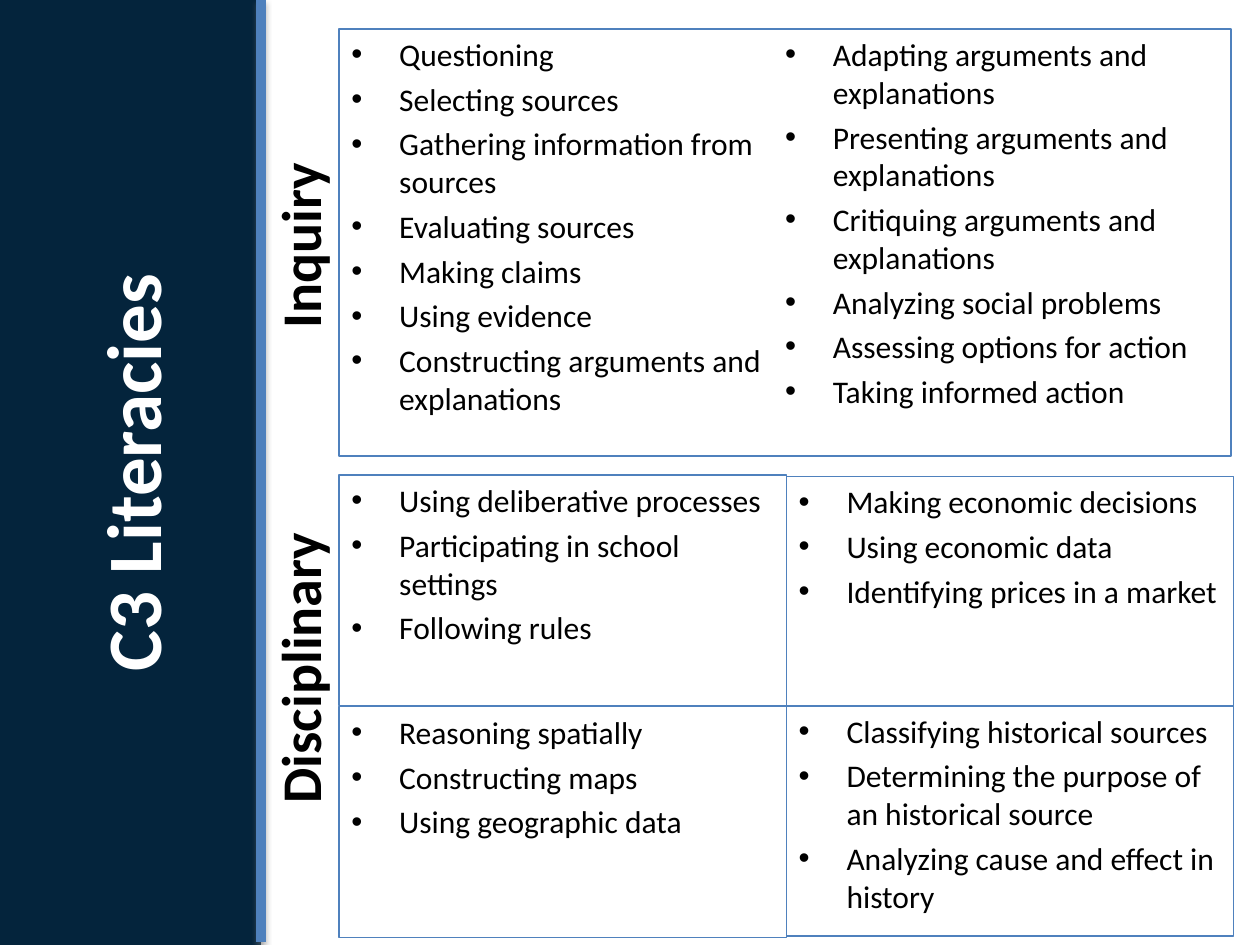
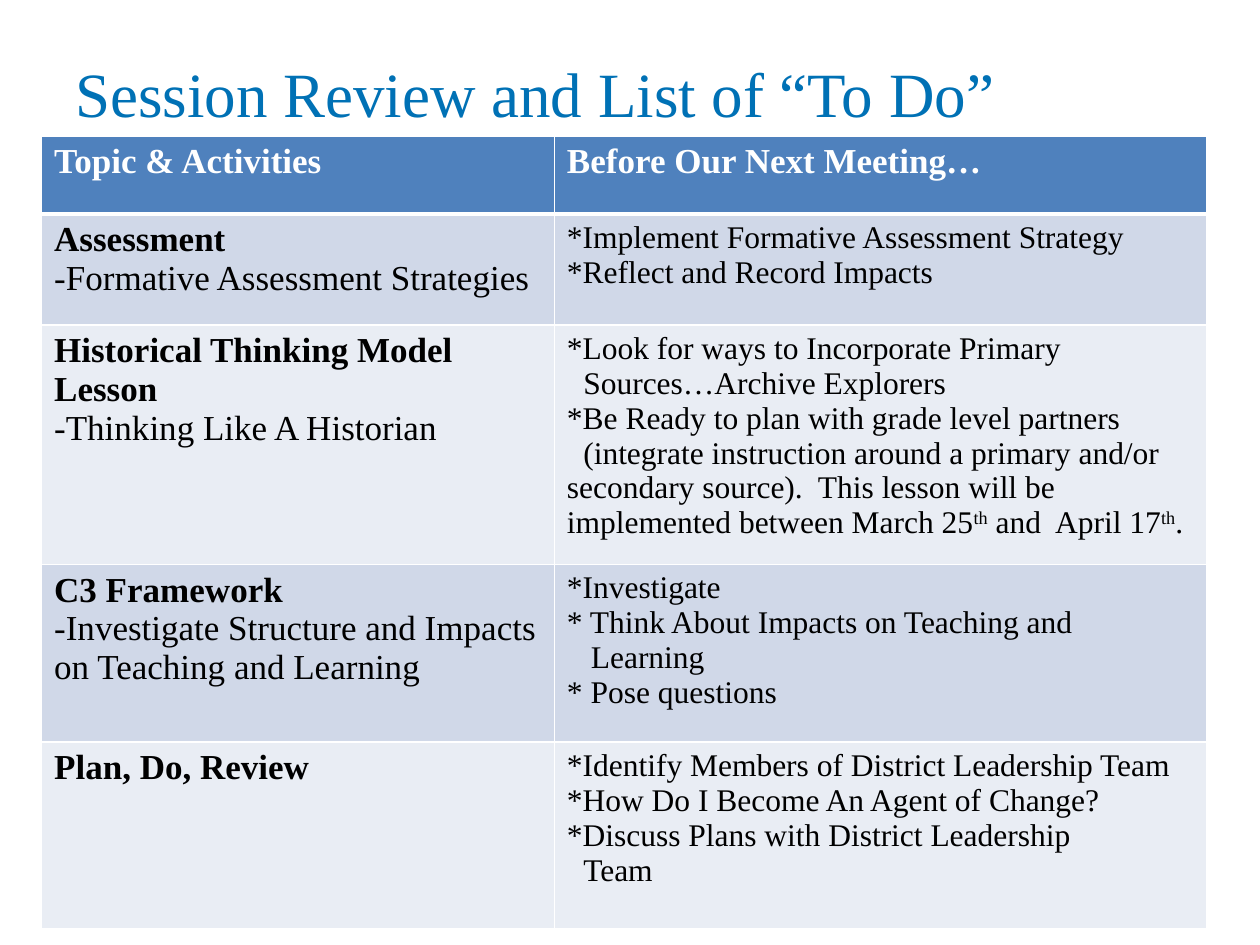
"""Build the C3 literacies overview and the session review table."""
from dataclasses import dataclass

import lxml.etree
import pptx
import pptx.dml.color
import pptx.enum.shapes
import pptx.enum.text
import pptx.oxml
import pptx.oxml.ns
import pptx.util

Inches = pptx.util.Inches
Pt = pptx.util.Pt
RGBColor = pptx.dml.color.RGBColor
qn = pptx.oxml.ns.qn

NAVY = RGBColor(0x04, 0x24, 0x3C)
BLUE = RGBColor(0x4F, 0x81, 0xBD)
TITLE_BLUE = RGBColor(0x00, 0x71, 0xB5)
PALE_BLUE = RGBColor(0xD0, 0xD8, 0xE8)
PALER_BLUE = RGBColor(0xE9, 0xED, 0xF4)
WHITE = RGBColor(0xFF, 0xFF, 0xFF)
BLACK = RGBColor(0x00, 0x00, 0x00)
GRAY = RGBColor(0x80, 0x80, 0x80)

SANS = "Calibri"
SERIF = "Times New Roman"
HANG = Inches(0.38)
BAND_WIDTH = 2.07


@dataclass(frozen=True)
class SkillBox:
    """A framed list of skills, placed in inches."""
    left: float
    top: float
    width: float
    height: float
    skills: tuple[str, ...]
    columns: int = 1


@dataclass(frozen=True)
class SideLabel:
    """A label that reads upwards, placed in inches before rotation."""
    text: str
    left: float
    top: float
    width: float


@dataclass(frozen=True)
class Span:
    """A piece of text within a line."""
    text: str
    raised: bool = False


@dataclass(frozen=True)
class Line:
    """A paragraph of a table cell with its first-line indent in inches."""
    spans: tuple[Span, ...]
    bold: bool = False
    indent: float = 0


@dataclass(frozen=True)
class SessionRow:
    """A table row: topic lines, task lines, height in inches and fill."""
    topic: tuple[Line, ...]
    tasks: tuple[Line, ...]
    height: float
    fill: RGBColor


def line(text: str, bold: bool = False, indent: float = 0) -> Line:
    """Return a line of one span."""
    return Line((Span(text),), bold, indent)


LEFT_COLUMN, RIGHT_COLUMN = 2.69, 6.24
CELL_WIDTH, CELL_HEIGHT = 3.55, 1.83
SKILL_BOXES = (
    SkillBox(LEFT_COLUMN, 0.23, 7.08, 3.39, (
        "Questioning", "Selecting sources", "Gathering information from sources",
        "Evaluating sources", "Making claims", "Using evidence",
        "Constructing arguments and explanations",
        "Adapting arguments and explanations",
        "Presenting arguments and explanations",
        "Critiquing arguments and explanations",
        "Analyzing social problems", "Assessing options for action",
        "Taking informed action"), columns=2),
    SkillBox(LEFT_COLUMN, 3.77, CELL_WIDTH, CELL_HEIGHT, (
        "Using deliberative processes", "Participating in school settings",
        "Following rules")),
    SkillBox(RIGHT_COLUMN, 5.6, CELL_WIDTH, CELL_HEIGHT, (
        "Classifying historical sources",
        "Determining the purpose of an historical source",
        "Analyzing cause and effect in history")),
    SkillBox(RIGHT_COLUMN, 3.78, CELL_WIDTH, CELL_HEIGHT, (
        "Making economic decisions", "Using economic data",
        "Identifying prices in a market")),
    SkillBox(LEFT_COLUMN, 5.61, CELL_WIDTH, CELL_HEIGHT, (
        "Reasoning spatially", "Constructing maps", "Using geographic data")),
)
SIDE_LABELS = (
    SideLabel("Inquiry", 1.61, 1.62, 1.53),
    SideLabel("Disciplinary", 1.19, 4.97, 2.37),
)

TABLE_WIDTHS = (4.07, 5.18)
HEADER_HEIGHT = 0.62
HEADINGS = ("Topic & Activities", "Before Our Next Meeting…")
SESSION_ROWS = (
    SessionRow(
        (line("Assessment", True), line("-Formative Assessment Strategies")),
        (line("*Implement Formative Assessment Strategy"),
         line("*Reflect and Record Impacts")), 0.88, PALE_BLUE),
    SessionRow(
        (line("Historical Thinking Model Lesson", True),
         line("-Thinking Like A Historian")),
        (line("*Look for ways to Incorporate Primary"),
         line("Sources…Archive Explorers", indent=0.13),
         line("*Be Ready to plan with grade level partners"),
         Line((Span("(integrate instruction around a primary and/or secondary "
                    "source).  This lesson will be implemented between March 25"),
               Span("th", True), Span(" and  April 17"), Span("th", True),
               Span(".")), indent=0.13)), 1.76, PALER_BLUE),
    SessionRow(
        (line("C3 Framework", True),
         line("-Investigate Structure and Impacts on Teaching and Learning")),
        (line("*Investigate"), line("* Think About Impacts on Teaching and"),
         line("Learning", indent=0.19), line("* Pose questions")),
        1.41, PALE_BLUE),
    SessionRow(
        (line("Plan, Do, Review", True),),
        (line("*Identify Members of District Leadership Team"),
         line("*How Do I Become An Agent of Change?"),
         line("*Discuss Plans with District Leadership"),
         line("Team", indent=0.13)), 1.48, PALER_BLUE),
)


def add_run(paragraph, text: str, font: str, size: float, color: RGBColor,
            bold: bool = False):
    """Add a formatted run and return it."""
    run = paragraph.add_run()
    run.text = text
    run.font.name = font
    run.font.size = Pt(size)
    run.font.bold = bold
    run.font.color.rgb = color
    return run


def add_shadow(shape, color: RGBColor, opacity: int) -> None:
    """Give a shape or connector a soft shadow below it."""
    properties = shape._element.spPr
    effects = properties.find(qn("a:effectLst"))
    if effects is None:
        effects = lxml.etree.SubElement(properties, qn("a:effectLst"))
    shadow = lxml.etree.SubElement(
        effects, qn("a:outerShdw"), blurRad=str(Pt(3.1)), dist=str(Pt(1.8)),
        dir="5400000", rotWithShape="0")
    tint = lxml.etree.SubElement(shadow, qn("a:srgbClr"), val=str(color))
    lxml.etree.SubElement(tint, qn("a:alpha"), val=str(opacity * 1000))


def add_rectangle(slide, left: float, top: float, width: float, height: float,
                  outline: RGBColor):
    """Add an unshadowed rectangle with a thin outline."""
    rectangle = slide.shapes.add_shape(
        pptx.enum.shapes.MSO_SHAPE.RECTANGLE,
        Inches(left), Inches(top), Inches(width), Inches(height))
    rectangle.shadow.inherit = False
    rectangle.fill.background()
    rectangle.line.color.rgb = outline
    rectangle.line.width = Pt(0.75)
    return rectangle


def add_title_band(slide, title: str) -> None:
    """Add the navy side band with its upward title and blue edge."""
    band = add_rectangle(slide, 0, 0, BAND_WIDTH, 7.5, NAVY)
    band.fill.solid()
    band.fill.fore_color.rgb = NAVY
    add_shadow(band, BLACK, 35)
    frame = band.text_frame
    frame.vertical_anchor = pptx.enum.text.MSO_ANCHOR.MIDDLE
    frame._txBody.bodyPr.set("vert", "vert270")
    paragraph = frame.paragraphs[0]
    paragraph.alignment = pptx.enum.text.PP_ALIGN.CENTER
    add_run(paragraph, title, SANS, 44, WHITE, bold=True)

    edge = slide.shapes.add_connector(
        pptx.enum.shapes.MSO_CONNECTOR.STRAIGHT,
        Inches(BAND_WIDTH), Inches(0), Inches(BAND_WIDTH), Inches(7.48))
    edge.line.color.rgb = BLUE
    edge.line.width = Pt(6)
    add_shadow(edge, GRAY, 38)


def add_skill_box(slide, box: SkillBox) -> None:
    """Add a framed bullet list."""
    panel = add_rectangle(slide, box.left, box.top, box.width, box.height, BLUE)
    frame = panel.text_frame
    frame.word_wrap = True
    frame.vertical_anchor = pptx.enum.text.MSO_ANCHOR.TOP
    if box.columns > 1:
        frame._txBody.bodyPr.set("numCol", str(box.columns))
        frame._txBody.bodyPr.set("spcCol", "0")
    for index, skill in enumerate(box.skills):
        paragraph = frame.add_paragraph() if index else frame.paragraphs[0]
        paragraph.alignment = pptx.enum.text.PP_ALIGN.LEFT
        if index:
            paragraph.space_before = Pt(3.9)
        properties = paragraph._p.get_or_add_pPr()
        properties.set("marL", str(HANG))
        properties.set("indent", str(-HANG))
        lxml.etree.SubElement(properties, qn("a:buFont"), typeface="Arial")
        lxml.etree.SubElement(properties, qn("a:buChar"), char="•")
        add_run(paragraph, skill, SANS, 18, BLACK)


def add_side_label(slide, label: SideLabel) -> None:
    """Add a bold label turned to read upwards."""
    text_box = slide.shapes.add_textbox(
        Inches(label.left), Inches(label.top), Inches(label.width), Inches(0.64))
    text_box.rotation = 270
    text_box.text_frame.word_wrap = False
    add_run(text_box.text_frame.paragraphs[0], label.text, SANS, 32, BLACK, bold=True)


def set_borders(cell, top: float, bottom: float) -> None:
    """Draw white cell borders, with top and bottom widths in points."""
    properties = cell._tc.get_or_add_tcPr()
    for side, width in (("L", 1), ("R", 1), ("T", top), ("B", bottom)):
        border = lxml.etree.SubElement(properties, qn(f"a:ln{side}"), w=str(Pt(width)))
        fill = lxml.etree.SubElement(border, qn("a:solidFill"))
        lxml.etree.SubElement(fill, qn("a:srgbClr"), val=str(WHITE))


def fill_cell(cell, lines: tuple[Line, ...], size: float, color: RGBColor,
              fill: RGBColor) -> None:
    """Write lines into a cell and colour it."""
    cell.fill.solid()
    cell.fill.fore_color.rgb = fill
    for index, entry in enumerate(lines):
        frame = cell.text_frame
        paragraph = frame.add_paragraph() if index else frame.paragraphs[0]
        if entry.indent:
            paragraph._p.get_or_add_pPr().set("indent", str(Inches(entry.indent)))
        for span in entry.spans:
            run = add_run(paragraph, span.text, SERIF, size, color, entry.bold)
            if span.raised:
                run._r.get_or_add_rPr().set("baseline", "30000")


def build_literacies(slide) -> None:
    """Build the literacies overview."""
    add_title_band(slide, "C3 Literacies")
    for box in SKILL_BOXES:
        add_skill_box(slide, box)
    for label in SIDE_LABELS:
        add_side_label(slide, label)


def build_review(slide) -> None:
    """Build the session review with its table."""
    title = slide.shapes.add_textbox(Inches(0.5), Inches(0.3), Inches(9), Inches(0.87))
    title.text_frame.word_wrap = True
    title.text_frame.vertical_anchor = pptx.enum.text.MSO_ANCHOR.MIDDLE
    add_run(title.text_frame.paragraphs[0], "Session Review and List of “To Do”",
            SERIF, 36, TITLE_BLUE)

    heights = (HEADER_HEIGHT, *(row.height for row in SESSION_ROWS))
    table = slide.shapes.add_table(
        len(heights), len(TABLE_WIDTHS), Inches(0.33), Inches(1.08),
        Inches(sum(TABLE_WIDTHS)), Inches(sum(heights))).table
    for column, width in zip(table.columns, TABLE_WIDTHS):
        column.width = Inches(width)
    for index, height in enumerate(heights):
        table.rows[index].height = Inches(height)
        for cell in table.rows[index].cells:
            set_borders(cell, 3 if index == 1 else 1, 3 if index == 0 else 1)
    for index, heading in enumerate(HEADINGS):
        fill_cell(table.cell(0, index), (line(heading, True),), 20, WHITE, BLUE)
    for index, row in enumerate(SESSION_ROWS, start=1):
        fill_cell(table.cell(index, 0), row.topic, 20, BLACK, row.fill)
        fill_cell(table.cell(index, 1), row.tasks, 18, BLACK, row.fill)


def main() -> None:
    """Build and save the presentation."""
    deck = pptx.Presentation()
    deck.slide_width = Inches(10)
    deck.slide_height = Inches(7.5)
    for build in (build_literacies, build_review):
        build(deck.slides.add_slide(deck.slide_layouts[6]))
    deck.save("out.pptx")


if __name__ == "__main__":
    main()
